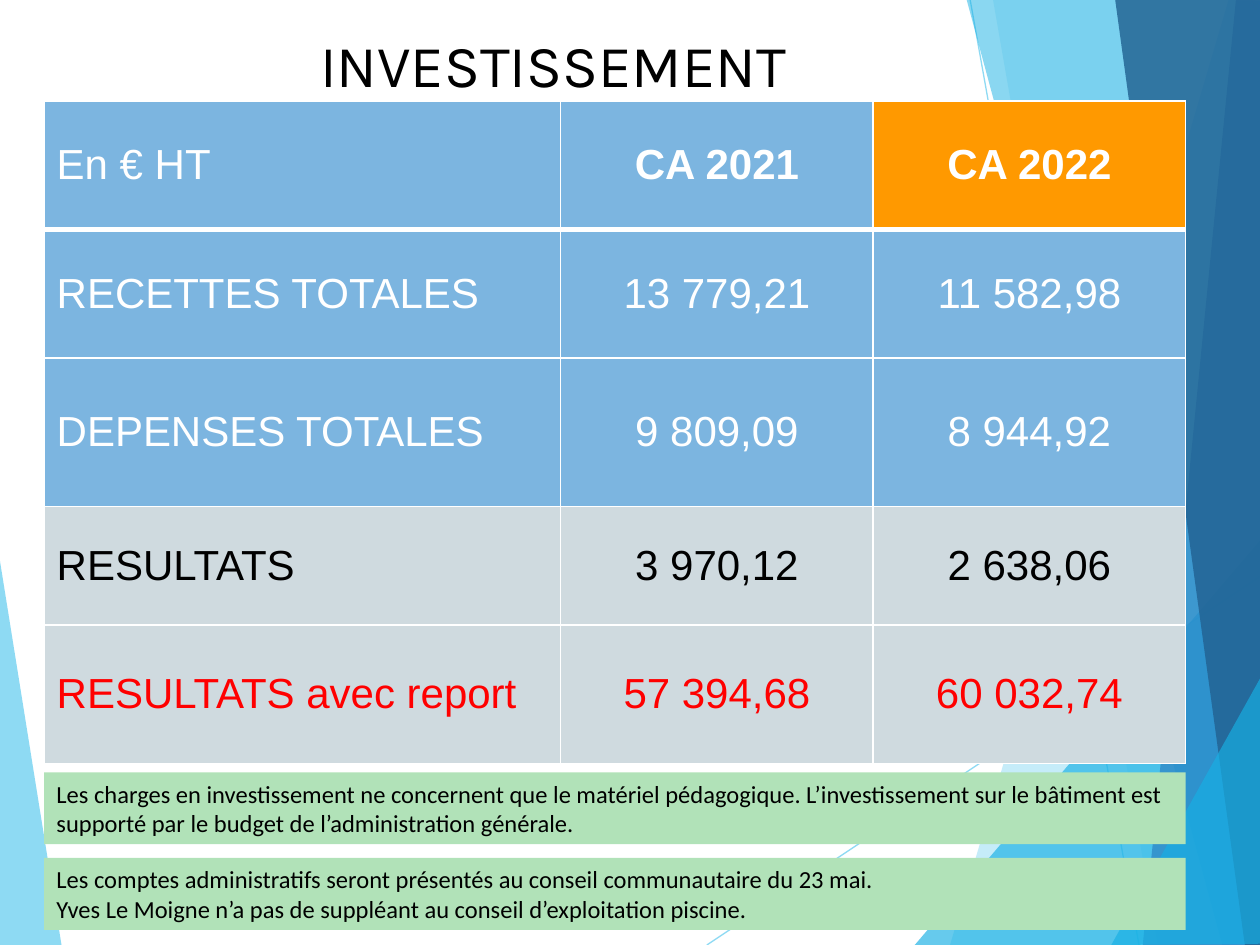
from dataclasses import dataclass

from lxml import etree
from pptx import Presentation
from pptx.dml.color import RGBColor
from pptx.enum.shapes import MSO_CONNECTOR, MSO_SHAPE
from pptx.enum.text import MSO_ANCHOR, MSO_AUTO_SIZE, PP_ALIGN
from pptx.oxml.ns import qn
from pptx.util import Pt

LEFT, CENTER = PP_ALIGN.LEFT, PP_ALIGN.CENTER
TOP, MIDDLE = MSO_ANCHOR.TOP, MSO_ANCHOR.MIDDLE
GROW = MSO_AUTO_SIZE.SHAPE_TO_FIT_TEXT
RECTANGLE, STRAIGHT = MSO_SHAPE.RECTANGLE, MSO_CONNECTOR.STRAIGHT
TITLE_ONLY = 5
EMU_PER_PX = 9144  # 100 px to the inch


@dataclass(frozen=True)
class Theme:
    white: str = "FFFFFF"
    black: str = "000000"
    red: str = "FF0000"
    sky: str = "5FCBEF"
    cyan: str = "17B0E4"
    blue: str = "2E83C3"
    navy: str = "226292"
    row_blue: str = "7CB5E0"
    row_grey: str = "CFDADF"
    orange: str = "FF9900"
    note_green: str = "B1E2B8"
    heading_font: str = "Karla"
    table_font: str = "Arial"
    note_font: str = "Calibri"
    title_size: int = 34
    table_size: int = 24
    note_size: int = 14


THEME = Theme()

# Colour, opacity in percent, corners in px; two lines lie above the first facet
LEFT_FACET = (THEME.sky, 70, [(-1, 439), (49, 751), (-1, 750)])
RIGHT_FACETS = [
    (THEME.sky, 36, [(975, 0), (754, 750), (1002, 751), (1001, 1)]),
    (THEME.sky, 20, [(788, -1), (919, 750), (1001, 750), (1001, -1)]),
    (THEME.cyan, 66, [(726, 750), (1000, 429), (1001, 750)]),
    (THEME.cyan, 50, [(767, -1), (970, 750), (1001, 749), (1001, -1)]),
    (THEME.blue, 70, [(981, -1), (907, 750), (1001, 750), (1000, -1)]),
    (THEME.navy, 82, [(885, -1), (988, 750), (1002, 750), (1000, -1)]),
    (THEME.cyan, 66, [(882, 750), (1002, 535), (1002, 749)]),
]
RAYS = [(561, 750, 1001, 457), (770, 0, 904, 750)]

COLUMN_WIDTHS = [410, 248, 248]
# Height, fill, text colour, cells
ROWS = [
    (102, THEME.row_blue, THEME.white, ["En € HT", "CA 2021", "CA 2022"]),
    (102, THEME.row_blue, THEME.white, ["RECETTES TOTALES", "13 779,21", "11 582,98"]),
    (118, THEME.row_blue, THEME.white, ["DEPENSES TOTALES", "9 809,09", "8 944,92"]),
    (94, THEME.row_grey, THEME.black, ["RESULTATS", "3 970,12", "2 638,06"]),
    (110, THEME.row_grey, THEME.red, ["RESULTATS avec report", "57 394,68", "60 032,74"]),
]

NOTES = [
    (613, ["Les charges en investissement ne concernent que le matériel pédagogique. "
           "L’investissement sur le bâtiment est supporté par le budget de "
           "l’administration générale."]),
    (681, ["Les comptes administratifs seront présentés au conseil communautaire du 23 mai.",
           "Yves Le Moigne n’a pas de suppléant au conseil d’exploitation piscine."]),
]


def px(*lengths):
    return [length * EMU_PER_PX for length in lengths]


def paint(fill, color):
    fill.solid()
    fill.fore_color.rgb = RGBColor.from_string(color)


def set_opacity(shape, percent):
    for color in shape.element.iter(qn("a:srgbClr")):
        etree.SubElement(color, qn("a:alpha"), val=str(percent * 1000))


def write(frame, lines, font, size, color, align=LEFT, anchor=TOP, bold=False):
    frame.word_wrap = True
    frame.vertical_anchor = anchor
    frame.text = "\n".join(lines)
    for para in frame.paragraphs:
        para.alignment = align
        para.font.name = font
        para.font.size = Pt(size)
        para.font.bold = bold
        para.font.color.rgb = RGBColor.from_string(color)


def add_facet(page, color, opacity, corners):
    builder = page.shapes.build_freeform(*corners[0], scale=EMU_PER_PX)
    builder.add_line_segments(corners[1:], close=True)
    facet = builder.convert_to_shape()
    facet.shadow.inherit = False
    paint(facet.fill, color)
    facet.line.fill.background()
    set_opacity(facet, opacity)


def add_ray(page, ends):
    ray = page.shapes.add_connector(STRAIGHT, *px(*ends))
    etree.SubElement(ray.element.spPr, qn("a:effectLst"))
    ray.line.width = Pt(0.75)
    ray.line.color.rgb = RGBColor.from_string(THEME.sky)
    set_opacity(ray, 70)


def add_backdrop(page):
    add_facet(page, *LEFT_FACET)
    for ends in RAYS:
        add_ray(page, ends)
    for facet in RIGHT_FACETS:
        add_facet(page, *facet)


def place_title(page, text):
    """Fill the title placeholder and bring it in front of the backdrop."""
    title = page.shapes.title
    title.left, title.top, title.width, title.height = px(43, 17, 792, 110)
    write(title.text_frame, [text], THEME.heading_font, THEME.title_size,
          THEME.black, CENTER)
    title.element.getparent().append(title.element)


def set_borders(cell, **widths):
    """Draw white borders, given in points by side (L, R, T, B)."""
    properties = cell._tc.get_or_add_tcPr()
    for side, width in widths.items():
        border = etree.SubElement(properties, qn(f"a:ln{side}"), w=str(Pt(width)))
        fill = etree.SubElement(border, qn("a:solidFill"))
        etree.SubElement(fill, qn("a:srgbClr"), val=THEME.white)


def add_results_table(page):
    size = sum(COLUMN_WIDTHS), sum(row[0] for row in ROWS)
    frame = page.shapes.add_table(len(ROWS), len(COLUMN_WIDTHS), *px(35, 80, *size))
    table = frame.table
    table.first_row = table.horz_banding = False
    for column, width in zip(table.columns, px(*COLUMN_WIDTHS)):
        column.width = width
    for r, (height, fill, color, texts) in enumerate(ROWS):
        table.rows[r].height = height * EMU_PER_PX
        for c, text in enumerate(texts):
            cell = table.cell(r, c)
            set_borders(cell, L=1, R=1, T=3 if r == 1 else 1, B=3 if r == 0 else 1)
            paint(cell.fill, THEME.orange if (r, c) == (0, 2) else fill)
            cell.vertical_anchor = MIDDLE
            write(cell.text_frame, [text], THEME.table_font, THEME.table_size, color,
                  CENTER if c else LEFT, MIDDLE, bold=r == 0 and c > 0)


def add_note(page, top, lines):
    note = page.shapes.add_shape(RECTANGLE, *px(35, top, 906, 57))
    note.shadow.inherit = False
    paint(note.fill, THEME.note_green)
    note.line.fill.background()
    write(note.text_frame, lines, THEME.note_font, THEME.note_size, THEME.black)
    note.text_frame.auto_size = GROW


def main():
    deck = Presentation()
    deck.slide_width, deck.slide_height = px(1000, 750)
    page = deck.slides.add_slide(deck.slide_layouts[TITLE_ONLY])
    paint(page.background.fill, THEME.white)
    add_backdrop(page)
    place_title(page, "INVESTISSEMENT")
    add_results_table(page)
    for top, lines in NOTES:
        add_note(page, top, lines)
    deck.save("out.pptx")


if __name__ == "__main__":
    main()
